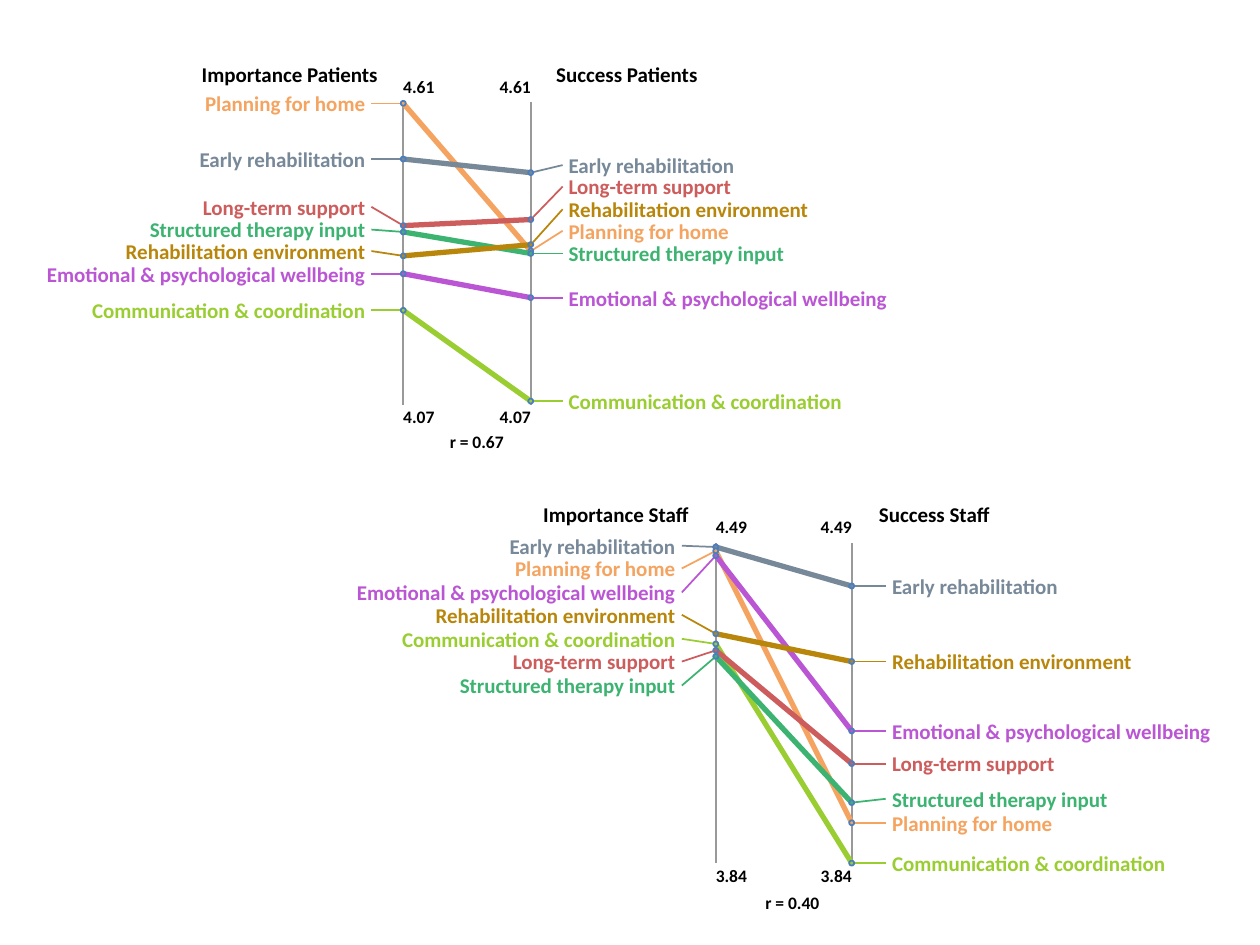
from dataclasses import dataclass

from lxml.etree import SubElement
from pptx import Presentation
from pptx.dml.color import RGBColor
from pptx.enum.shapes import MSO_CONNECTOR as Connector, MSO_SHAPE as Preset
from pptx.enum.text import MSO_ANCHOR as Anchor, PP_ALIGN as Align
from pptx.oxml.ns import qn
from pptx.util import Cm, Pt

COLORS = {
    "Planning for home": "F4A460",
    "Early rehabilitation": "778899",
    "Long-term support": "CD5C5C",
    "Structured therapy input": "3CB371",
    "Rehabilitation environment": "B8860B",
    "Emotional & psychological wellbeing": "BA55D3",
    "Communication & coordination": "9ACD32",
    "text": "000000",
    "axis": "999999",
    "marker": "4B7EBC",
}
FONT = "Calibri"
TEXT_WIDTH = 6.9
TEXT_HEIGHT = 0.52
MARKER_SIZE = 0.1

PATIENT_ROWS = [
    ("Planning for home", 0.4, 0.4, 49.2, 42.5),
    ("Early rehabilitation", 18.8, 18.8, 23.3, 20.8),
    ("Long-term support", 34.6, 40.8, 38.8, 27.9),
    ("Structured therapy input", 42.1, 42.9, 50, 50),
    ("Rehabilitation environment", 49.2, 50.8, 47.1, 35.4),
    ("Emotional & psychological wellbeing", 56.7, 56.7, 64.6, 64.6),
    ("Communication & coordination", 68.8, 68.8, 98.8, 98.8),
]
STAFF_ROWS = [
    ("Early rehabilitation", 0.8, 1.2, 13.4, 13.4),
    ("Planning for home", 7.9, 2.4, 87.4, 87.4),
    ("Emotional & psychological wellbeing", 15.4, 3.9, 58.7, 58.7),
    ("Rehabilitation environment", 22.4, 28.3, 37, 37),
    ("Communication & coordination", 29.9, 31.5, 100, 100),
    ("Long-term support", 37, 33.5, 68.9, 68.9),
    ("Structured therapy input", 44.5, 35.4, 81.1, 79.9),
]


@dataclass
class Box:
    left: float
    top: float
    width: float
    height: float

    def point(self, across, down):
        return self.left + self.width * across / 100, self.top + self.height * down / 100


def color(name):
    return RGBColor.from_string(COLORS[name])


def add_text(shapes, text, position, size=12, ink="text", align=Align.LEFT):
    x, y = position
    left = x - TEXT_WIDTH if align == Align.RIGHT else x
    shape = shapes.add_textbox(Cm(left), Cm(y - TEXT_HEIGHT / 2), Cm(TEXT_WIDTH), Cm(TEXT_HEIGHT))
    frame = shape.text_frame
    frame.word_wrap = True
    frame.vertical_anchor = Anchor.MIDDLE
    frame.margin_left = frame.margin_right = frame.margin_top = frame.margin_bottom = 0
    paragraph = frame.paragraphs[0]
    paragraph.alignment = align
    run = paragraph.add_run()
    run.text = text
    run.font.name = FONT
    run.font.size = Pt(size)
    run.font.bold = True
    run.font.color.rgb = color(ink)


def add_line(shapes, start, end, ink, width=1):
    ends = [Cm(length) for length in (*start, *end)]
    line = shapes.add_connector(Connector.STRAIGHT, *ends)
    line.line.color.rgb = color(ink)
    line.line.width = Pt(width)
    SubElement(line._element.spPr, qn("a:effectLst"))


def add_marker(shapes, center, ink):
    x, y = center
    radius = MARKER_SIZE / 2
    shape = shapes.add_shape(
        Preset.OVAL, Cm(x - radius), Cm(y - radius), Cm(MARKER_SIZE), Cm(MARKER_SIZE))
    shape.shadow.inherit = False
    shape.fill.solid()
    shape.fill.fore_color.rgb = color(ink)
    shape.line.color.rgb = color("marker")
    shape.line.width = Pt(1)


def add_row(shapes, box, name, left_label, importance, success, right_label):
    start, end = box.point(0, importance), box.point(100, success)
    add_text(shapes, name, box.point(-29.7, left_label), ink=name, align=Align.RIGHT)
    add_text(shapes, name, box.point(129.7, right_label), ink=name)
    add_line(shapes, box.point(-25, left_label), start, name)
    add_line(shapes, end, box.point(125, right_label), name)
    add_line(shapes, start, end, name, width=3)
    for center in (start, end):
        add_marker(shapes, center, name)


def add_slope_panel(slide, box, group_name, high, low, correlation, rows):
    shapes = slide.shapes.add_group_shape().shapes
    add_text(shapes, f"Importance {group_name}", box.point(-20, -9.2), align=Align.RIGHT)
    add_text(shapes, f"Success {group_name}", box.point(120, -9.2))
    for across in (0, 100):
        add_line(shapes, box.point(across, 100), box.point(across, 0), "axis")
    for row in rows:
        add_row(shapes, box, *row)
    for value, down in ((low, 103.8), (high, -5.3)):
        add_text(shapes, value, box.point(0, down), size=10)
        add_text(shapes, value, box.point(100, down), size=10, align=Align.RIGHT)
    add_text(shapes, f"r = {correlation}", box.point(36.5, 112.3), size=10)


def main():
    presentation = Presentation()
    presentation.slide_width = Cm(25.4)
    presentation.slide_height = Cm(19.05)
    slide = presentation.slides.add_slide(presentation.slide_layouts[6])
    add_slope_panel(slide, Box(8.13, 2.06, 2.57, 6.1), "Patients",
                    "4.61", "4.07", "0.67", PATIENT_ROWS)
    add_slope_panel(slide, Box(14.43, 10.95, 2.74, 6.45), "Staff",
                    "4.49", "3.84", "0.40", STAFF_ROWS)
    presentation.save("out.pptx")


if __name__ == "__main__":
    main()
